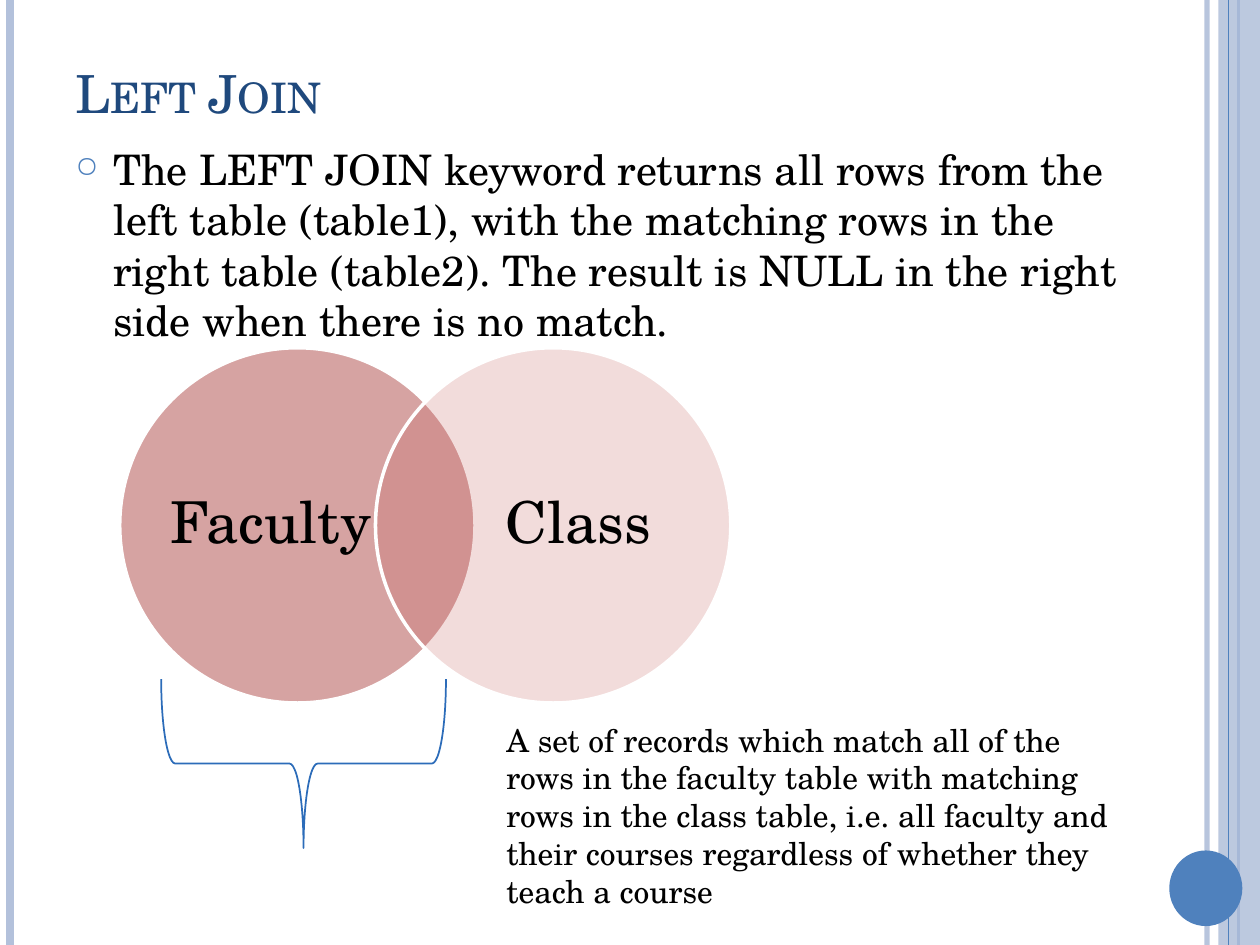
from typing import NamedTuple, Optional

from lxml.etree import SubElement
from pptx import Presentation
from pptx.dml.color import RGBColor
from pptx.enum.shapes import MSO_CONNECTOR, MSO_SHAPE
from pptx.enum.text import MSO_ANCHOR, MSO_AUTO_SIZE, PP_ALIGN
from pptx.oxml.ns import qn
from pptx.util import Inches, Pt

FONT = "TeX Gyre Schola"
COLORS = {
    "rail": "B3C1DB",
    "accent": "4F81BD",
    "title": "1F497D",
    "text": "000000",
    "outline": "FFFFFF",
    "left": "AE4946",
    "right": "C0524F",
    "brace": "2C6CB9",
}


class Rail(NamedTuple):
    x: float
    color: str
    width: float
    opacity: int = 100


class VennSet(NamedTuple):
    label: str
    x: float
    label_x: float
    color: str
    opacity: int


RAILS = [
    Rail(9.58, "rail", 3, 93),
    Rail(0.08, "rail", 4.5),
    Rail(9.83, "accent", 1.5),
    Rail(9.75, "accent", 0.75),
]
VENN_SETS = [
    VennSet("Faculty", 0.95, 1.34, "left", 50),
    VennSet("Class", 2.98, 3.78, "right", 20),
]
DEFINITION = (
    "The LEFT JOIN keyword returns all rows from the left table (table1), "
    "with the matching rows in the right table (table2). The result is NULL "
    "in the right side when there is no match."
)
EXPLANATION = (
    "A set of records which match all of the rows in the faculty table with "
    "matching rows in the class table, i.e. all faculty and their courses "
    "regardless of whether they teach a course"
)


def paint(fill, color: str, opacity: int = 100) -> None:
    fill.solid()
    fill.fore_color.rgb = RGBColor.from_string(COLORS[color])
    if opacity < 100:
        clr = fill._xPr.find(qn("a:solidFill"))[0]
        SubElement(clr, qn("a:alpha"), val=str(opacity * 1000))


def add_rail(slide, rail: Rail) -> None:
    x = Inches(rail.x)
    cxn = slide.shapes.add_connector(MSO_CONNECTOR.STRAIGHT, x, 0, x, Inches(7.5))
    cxn.line.width = Pt(rail.width)
    paint(cxn.line.fill, rail.color, rail.opacity)
    SubElement(cxn._element.spPr, qn("a:effectLst"))


def add_shape(slide, kind, box, fill: Optional[str] = None, opacity: int = 100,
              line: Optional[str] = None, width: float = 1):
    sp = slide.shapes.add_shape(kind, *map(Inches, box))
    sp.shadow.inherit = False
    if fill:
        paint(sp.fill, fill, opacity)
    else:
        sp.fill.background()
    if line:
        paint(sp.line.fill, line)
        sp.line.width = Pt(width)
    else:
        sp.line.fill.background()
    return sp


def write(tf, text: str, size: float, color: str = "text", align=PP_ALIGN.LEFT,
          anchor=MSO_ANCHOR.TOP, inset: Optional[float] = None):
    tf.word_wrap = True
    tf.auto_size = MSO_AUTO_SIZE.NONE
    tf.vertical_anchor = anchor
    if inset is not None:
        tf.margin_left = tf.margin_right = Inches(inset)
        tf.margin_top = tf.margin_bottom = Inches(inset)
    p = tf.paragraphs[0]
    p.alignment = align
    r = p.add_run()
    r.text = text
    r.font.name = FONT
    r.font.size = Pt(size)
    r.font.color.rgb = RGBColor.from_string(COLORS[color])
    return p


def add_text(slide, box, text: str, size: float, **fmt):
    tf = slide.shapes.add_textbox(*map(Inches, box)).text_frame
    return write(tf, text, size, **fmt)


def add_title(slide, text: str) -> None:
    sp = slide.shapes.title
    sp.left, sp.top, sp.width, sp.height = map(Inches, (0.5, 0.3, 8.67, 0.87))
    p = write(sp.text_frame, text, 30, color="title", anchor=MSO_ANCHOR.MIDDLE)
    p.runs[0]._r.get_or_add_rPr().set("cap", "small")


def set_bullet(p, char: str, indent: float, color: str, percent: int) -> None:
    pPr = p._p.get_or_add_pPr()
    pPr.set("marL", str(Inches(indent)))
    pPr.set("indent", str(-Inches(indent)))
    clr = SubElement(pPr, qn("a:buClr"))
    SubElement(clr, qn("a:srgbClr"), val=COLORS[color])
    SubElement(pPr, qn("a:buSzPct"), val=str(percent * 1000))
    SubElement(pPr, qn("a:buChar"), char=char)


def add_venn_set(slide, item: VennSet) -> None:
    add_shape(slide, MSO_SHAPE.OVAL, (item.x, 2.76, 2.82, 2.82), fill=item.color,
              opacity=item.opacity, line="outline", width=2)
    p = add_text(slide, (item.label_x, 3.09, 1.62, 2.15), item.label, 33,
                 align=PP_ALIGN.CENTER, anchor=MSO_ANCHOR.MIDDLE, inset=0)
    p.line_spacing = 0.9


def main() -> None:
    prs = Presentation()
    prs.slide_width, prs.slide_height = Inches(10), Inches(7.5)
    slide = prs.slides.add_slide(prs.slide_layouts[5])

    for rail in RAILS[:3]:
        add_rail(slide, rail)
    add_shape(slide, MSO_SHAPE.RECTANGLE, (9.67, 0, 0.33, 7.5), fill="rail", opacity=87)
    add_rail(slide, RAILS[3])
    add_shape(slide, MSO_SHAPE.OVAL, (9.28, 6.75, 0.58, 0.6), fill="accent")

    add_title(slide, "Left Join")
    p = add_text(slide, (0.5, 1.09, 8.67, 5.66), DEFINITION, 24)
    p.space_before = Pt(6)
    set_bullet(p, "○", 0.3, "accent", 70)

    for item in VENN_SETS:
        add_venn_set(slide, item)
    brace = add_shape(slide, MSO_SHAPE.LEFT_BRACE, (1.74, 4.93, 1.34, 2.26), line="brace")
    brace.rotation = 270
    add_text(slide, (3.92, 5.67, 5, 1.62), EXPLANATION, 18)

    prs.save("out.pptx")


if __name__ == "__main__":
    main()
